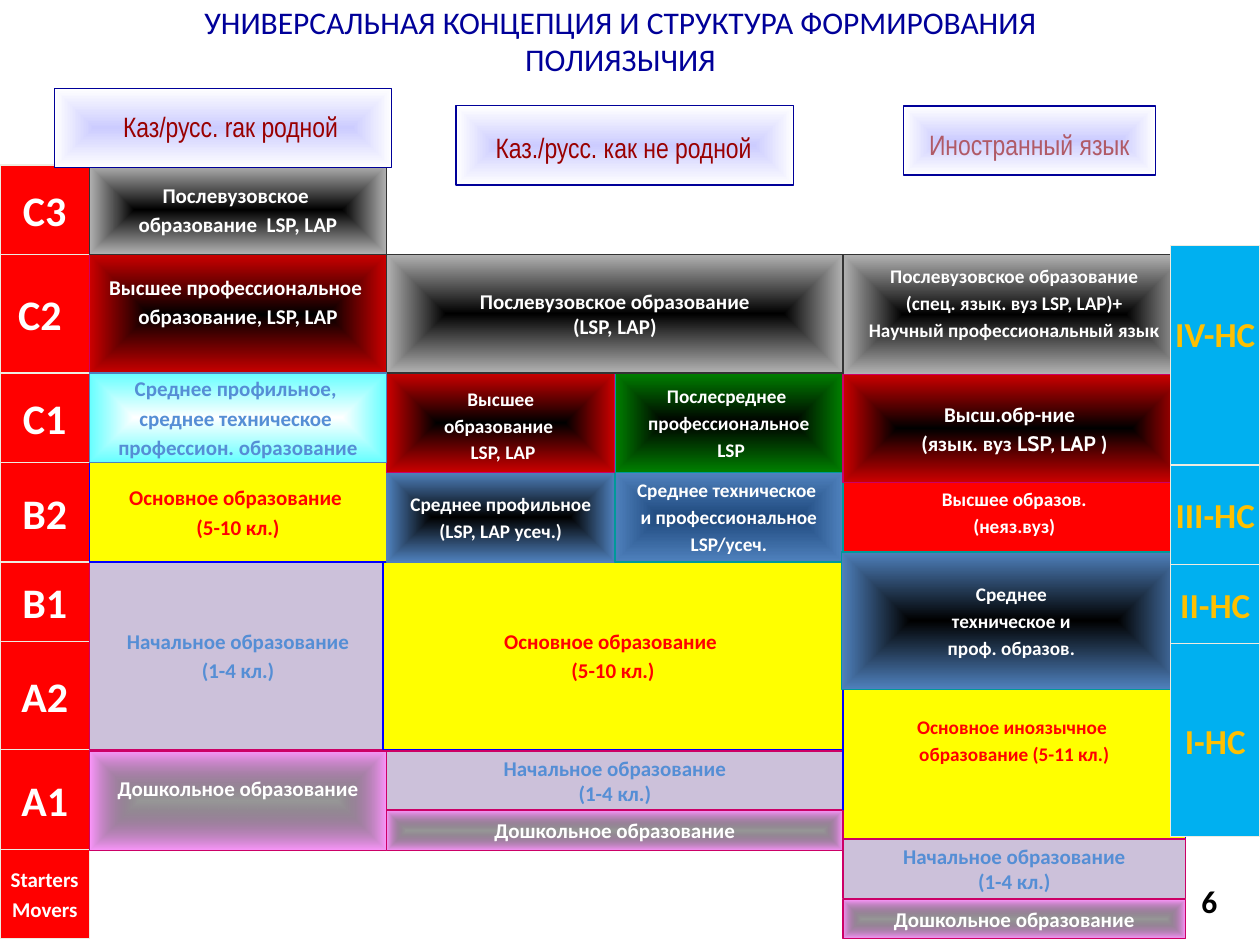
"""Build the slide on the structure of multilingual education."""
from itertools import pairwise

from lxml import etree
from pptx import Presentation
from pptx.dml.color import RGBColor
from pptx.enum.shapes import MSO_SHAPE
from pptx.enum.text import MSO_ANCHOR, PP_ALIGN
from pptx.oxml.ns import qn
from pptx.util import Inches, Pt

RECTANGLE = MSO_SHAPE.RECTANGLE
MIDDLE, TOP = MSO_ANCHOR.MIDDLE, MSO_ANCHOR.TOP
CENTER, RIGHT = PP_ALIGN.CENTER, PP_ALIGN.RIGHT
COLORS = {
    "black": "000000", "white": "FFFFFF", "navy": "000099", "red": "FF0000",
    "dark_red": "990000", "faded_red": "B05A66", "crimson": "CC0000",
    "magenta": "CC0066", "yellow": "FFFF00", "blue": "0000FF", "sky": "00B0F0",
    "gold": "FFC000", "cream": "EEECE1", "lilac": "CCC1DA", "text_blue": "558ED5",
    "steel": "4F81BD", "deep_blue": "1F497D", "teal": "009999", "green": "008000",
    "gray": "B2B2B2", "charcoal": "333333", "pink": "FF99FF", "cyan": "66FFFF",
    "lavender": "CCCCFF",
}
# style: centre fill, edge fill, line, text
STYLES = {
    "level": ("red", None, "cream", "white"),
    "standard": ("sky", None, "cream", "gold"),
    "preschool": ("black", "pink", "magenta", "white"),
    "primary": ("lilac", None, "magenta", "text_blue"),
    "basic": ("yellow", None, "blue", "red"),
    "profile": ("white", "cyan", "steel", "text_blue"),
    "secondary": ("black", "steel", "steel", "white"),
    "technical": ("deep_blue", "steel", "teal", "white"),
    "vocational": ("black", "steel", "teal", "white"),
    "post_secondary": ("black", "green", "teal", "white"),
    "higher": ("black", "crimson", "magenta", "white"),
    "other_higher": ("red", None, "teal", "white"),
    "postgraduate": ("black", "gray", "charcoal", "white"),
    "heading": ("lavender", "white", "navy", "dark_red"),
}
LEVELS = [["С3"], ["С2 "], ["С1"], ["В2"], ["В1"], ["А2"], ["А1"], ["Starters", "Movers"]]
LEVEL_EDGES = [1.31, 2.02, 2.96, 3.67, 4.46, 5.09, 5.95, 6.74, 7.45]
STANDARDS = ["IV-НС", "III-НС", "II-НС", "I-НС"]
STANDARD_EDGES = [1.95, 3.69, 4.48, 5.11, 6.64]
NATIVE, SECOND, FOREIGN = (0.71, 2.36), (3.07, 3.62), (6.69, 2.72)
SECOND_LEFT, SECOND_RIGHT = (3.07, 1.81), (4.88, 1.81)
PRIMARY = ["Начальное образование", "(1-4 кл.)"]
BASIC = ["Основное образование ", "(5-10 кл.)"]
PRESCHOOL = ["Дошкольное образование"]
# column, top, height, style, size, lines, space before, upward shift
CELLS = [
    (NATIVE, 4.46, 1.49, "primary", 12, PRIMARY, 0.2, 0),
    (NATIVE, 5.96, 0.79, "preschool", 12, PRESCHOOL, 0.2, 0.1),
    (NATIVE, 3.67, 0.79, "basic", 12, BASIC, 0.2, 0),
    (NATIVE, 2.02, 0.95, "higher", 12,
     ["Высшее профессиональное ", "образование, LSP, LAP"], 0.2, 0.1),
    (SECOND, 5.96, 0.47, "primary", 12, PRIMARY, 0, 0),
    ((3.04, 3.65), 4.46, 1.49, "basic", 12, BASIC, 0.2, 0),
    (FOREIGN, 5.08, 1.59, "basic", 11,
     ["Основное иноязычное ", "образование (5-11 кл.)"], 0.2, 0),
    (SECOND_LEFT, 3.75, 0.71, "secondary", 11,
     ["Среднее профильное", "(LSP, LAP усеч.)"], 0.2, 0),
    (SECOND_RIGHT, 3.75, 0.71, "technical", 11,
     ["Среднее техническое ", "и профессиональное", "LSP/усеч."], 0.2, 0),
    (SECOND_RIGHT, 2.96, 0.79, "post_secondary", 11,
     ["Послесреднее ", "профессиональное", " LSP"], 0.2, 0),
    (SECOND_LEFT, 2.96, 0.79, "higher", 11,
     ["Высшее", "образование ", " LSP, LAP"], 0.2, -0.02),
    (SECOND, 2.02, 0.94, "postgraduate", 12,
     ["Послевузовское образование", "(LSP, LAP)"], 0, 0),
    (FOREIGN, 2.02, 0.95, "postgraduate", 11,
     ["Послевузовское образование", "(спец. язык. вуз LSP, LAP)+",
      "Научный профессиональный язык"], 0.2, 0.09),
    (FOREIGN, 3.75, 0.63, "other_higher", 11, ["Высшее образов.", "(неяз.вуз)"], 0.2, 0),
    ((6.68, 2.73), 4.38, 1.09, "vocational", 11,
     ["Среднее ", "техническое и ", "проф. образов. "], 0.2, 0),
    (FOREIGN, 2.97, 0.86, "higher", 12,
     ["Высш.обр-ние  ", [("(язык. вуз ", "Calibri"), ("LSP, LAP ", "Cabin"),
                         (")", "Calibri")]], 0.2, 0),
    (NATIVE, 2.96, 0.71, "profile", 12,
     ["Среднее профильное, ", "среднее техническое ", "профессион. образование"], 0.2, 0),
    (NATIVE, 1.31, 0.71, "postgraduate", 12,
     ["Послевузовское ", "образование  LSP, LAP"], 0.2, 0),
    (FOREIGN, 6.66, 0.47, "primary", 12, PRIMARY, 0, 0),
    (SECOND, 6.43, 0.32, "preschool", 12, PRESCHOOL, 0, 0),
    (FOREIGN, 7.14, 0.31, "preschool", 12, PRESCHOOL, 0, 0),
]
# box, label place, text, colour
HEADINGS = [
    ((3.62, 0.84, 2.68, 0.63), (3.78, 0.99, 2.34, 0.27), "Каз./русс. как не родной", "dark_red"),
    ((7.17, 0.84, 2, 0.55), (7.25, 0.96, 1.84, 0.27), "Иностранный язык", "faded_red"),
    ((0.43, 0.7, 2.68, 0.63), (0.66, 0.82, 2.34, 0.27), "Каз/русс. rак родной", "dark_red"),
]


def rgb(name):
    """Return the named colour."""
    return RGBColor.from_string(COLORS[name])


def add_span(para, text, size, color, font="Calibri", bold=False):
    """Append one formatted run to a paragraph."""
    span = para.add_run()
    span.text = text
    span.font.name, span.font.size, span.font.bold = font, Pt(size), bold
    span.font.color.rgb = rgb(color)


def fill_from_center(shape, center, edge):
    """Give a shape a rectangular gradient that spreads from its centre."""
    shape.fill.gradient()
    for stop, name in zip(shape.fill.gradient_stops, (center, edge)):
        stop.color.rgb = rgb(name)
    gradient = shape._element.spPr.find(qn("a:gradFill"))
    if edge == "pink":
        first = gradient.find(".//" + qn("a:srgbClr"))
        etree.SubElement(first, qn("a:alpha"), val="40000")
    gradient.remove(gradient.find(qn("a:lin")))
    spread = etree.SubElement(gradient, qn("a:path"), path="shape")
    etree.SubElement(spread, qn("a:fillToRect"), {side: "50000" for side in "ltrb"})


def add_box(page, place, style):
    """Add an outlined rectangle in one of the styles."""
    center, edge, line, _ = STYLES[style]
    box = page.shapes.add_shape(RECTANGLE, *map(Inches, place))
    box.shadow.inherit = False
    if edge:
        fill_from_center(box, center, edge)
    else:
        box.fill.solid()
        box.fill.fore_color.rgb = rgb(center)
    box.line.color.rgb = rgb(line)
    box.line.width = Pt(0.75)
    return box


def add_cell(page, place, style, size, lines, spacing=0.2, lift=0):
    """Add a box with centred bold lines, moved up by lift."""
    frame = add_box(page, place, style).text_frame
    frame.word_wrap = False
    frame.vertical_anchor = MIDDLE
    frame.margin_bottom = Inches(0.05 + 2 * max(lift, 0))
    frame.margin_top = Inches(0.05 + 2 * max(-lift, 0))
    for index, line in enumerate(lines):
        para = frame.add_paragraph() if index else frame.paragraphs[0]
        para.alignment = CENTER
        para.space_before = Pt(size * spacing)
        for text, font in [(line, "Calibri")] if isinstance(line, str) else line:
            add_span(para, text, size, STYLES[style][3], font, True)


def add_label(page, place, text, size, color, font, align=CENTER, anchor=TOP, bold=False):
    """Add a one-line text box."""
    frame = page.shapes.add_textbox(*map(Inches, place)).text_frame
    frame.word_wrap = False
    frame.vertical_anchor = anchor
    frame.paragraphs[0].alignment = align
    add_span(frame.paragraphs[0], text, size, color, font, bold)


def add_title(page, text):
    """Place and fill the title."""
    title = page.shapes.title
    title.left, title.top, title.width, title.height = map(Inches, (1.23, -0.03, 7.39, 0.7))
    title.text_frame.word_wrap = True
    title.text_frame.vertical_anchor = TOP
    para = title.text_frame.paragraphs[0]
    para.alignment = CENTER
    add_span(para, text, 18, "navy")


def main():
    """Build and save the deck."""
    deck = Presentation()
    deck.slide_width, deck.slide_height = Inches(10), Inches(7.5)
    page = deck.slides.add_slide(deck.slide_layouts[5])
    add_title(page, "УНИВЕРСАЛЬНАЯ КОНЦЕПЦИЯ И СТРУКТУРА ФОРМИРОВАНИЯ ПОЛИЯЗЫЧИЯ")
    for lines, (top, bottom) in zip(LEVELS, pairwise(LEVEL_EDGES)):
        size = 24 if len(lines) == 1 else 12
        add_cell(page, (0, top, 0.71, bottom - top), "level", size, lines)
    for (left, width), top, height, *content in CELLS:
        add_cell(page, (left, top, width, height), *content)
    for box, place, text, color in HEADINGS:
        add_box(page, box, "heading")
        add_label(page, place, text, 16, color, "Arial Narrow")
    for text, (top, bottom) in zip(STANDARDS, pairwise(STANDARD_EDGES)):
        lift = 0.17 if text == "IV-НС" else 0
        add_cell(page, (9.29, top, 0.71, bottom - top), "standard", 20, [text], lift=lift)
    add_label(page, (8.98, 6.95, 0.78, 0.4), "6", 18, "black", "Calibri", RIGHT, MIDDLE, True)
    deck.save("out.pptx")


if __name__ == "__main__":
    main()
